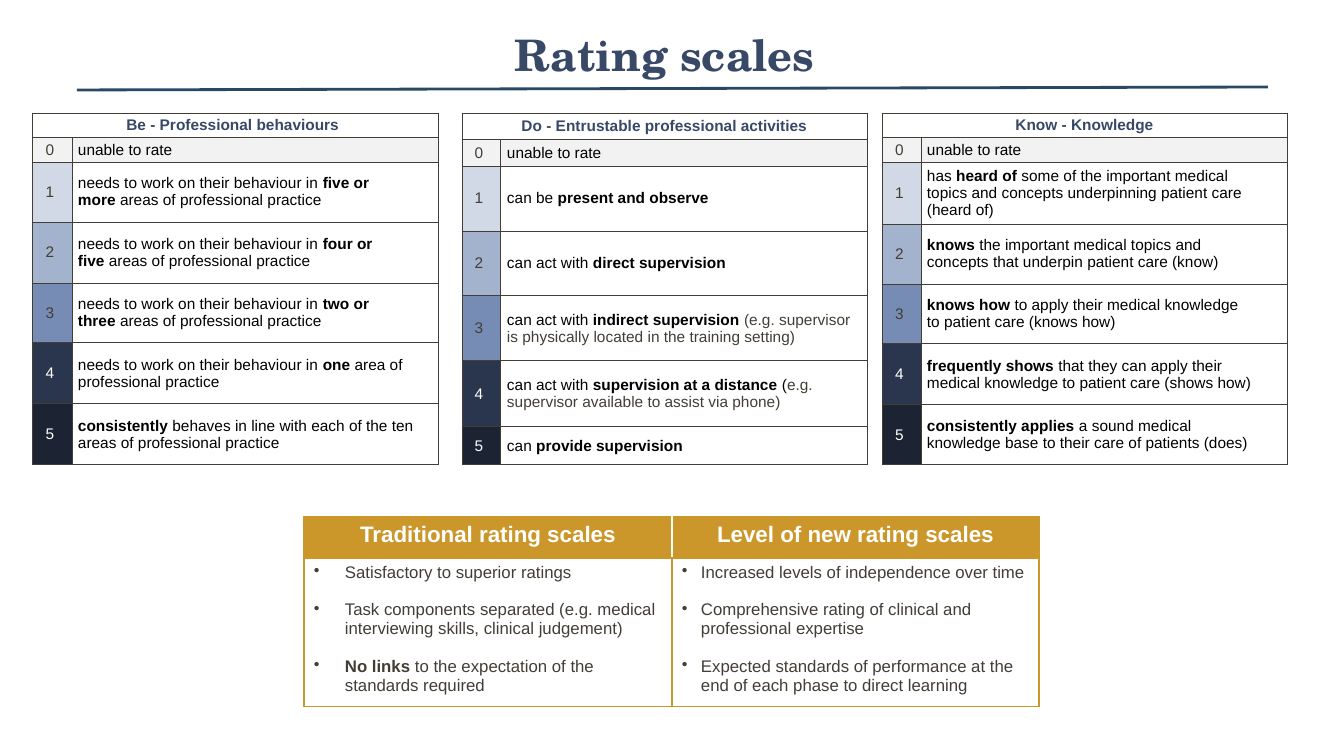
from lxml.etree import SubElement
from pptx import Presentation
from pptx.dml.color import RGBColor
from pptx.enum.shapes import MSO_CONNECTOR
from pptx.enum.text import MSO_ANCHOR, PP_ALIGN
from pptx.oxml.ns import qn
from pptx.util import Pt

SCALE = 12192000 / 1344
NBSP = chr(160)
NAVY, GREY, GOLD = "384967", "433E35", "CB972B"
BLACK, WHITE = "000000", "FFFFFF"
SHADES = ["F2F2F2", "D1D8E6", "A3B2CD", "768CB4", "2A364D", "1C2433"]
NEEDS = "needs to work on their~behaviour~in~"

SCALES = [
    dict(head="Be - Professional behaviours~", x=32, cols=(40, 366), pads=(6, 3),
         rows=(24, 24, 60, 61, 60, 61, 61), levels=[
             NEEDS + "*five~or more~*areas of professional practice",
             NEEDS + "*four~or five~*areas of professional practice",
             NEEDS + "*two~or three~*areas of professional practice",
             NEEDS + "*one~*area of professional practice",
             "*consistently~*behaves in line with each of~the ten areas of "
             "professional practice"]),
    dict(head="Do - Entrustable~professional activities", x=462, cols=(38, 367), pads=(7, 4),
         rows=(26, 26, 65, 65, 65, 66, 38), levels=[
             "can be~*present and observe*",
             "can act with~*direct supervision*",
             "can act with*~indirect supervision~*|(e.g. supervisor is physically "
             "located in the training setting)",
             "can act with~*supervision at a distance*~(|e.g. supervisor available "
             "to assist via phone)",
             "can~*provide supervision*"]),
    dict(head="Know - Knowledge", x=882, cols=(39, 366), pads=(6, 3),
         rows=(24, 24, 62, 60, 60, 61, 60), levels=[
             "has~*heard of~*some of the important medical topics~and concepts "
             "underpinning patient care (heard of)",
             "*knows~*the important medical topics and concepts~that underpin "
             "patient care (know)",
             "*knows how~*to apply their medical knowledge to~patient care (knows how)",
             "*frequently shows*~that they can apply their medical~knowledge to "
             "patient care (shows how)",
             "*consistently applies*~a sound medical knowledge~base to their care "
             "of patients (does)"]),
]

CHANGES = [
    ("Traditional rating scales", 31, [
        "Satisfactory to superior ratings",
        "Task components separated (e.g. medical interviewing skills, clinical judgement)",
        "*No links *to the expectation of the standards required"]),
    ("Level of new rating scales", 19, [
        "Increased levels of independence over time",
        "Comprehensive rating of clinical and professional expertise",
        "Expected standards of performance at the end of each phase to direct learning"]),
]


def px(n):
    return round(n * SCALE)


def tint(code):
    return RGBColor.from_string(code)


def write(para, text, size=11, color=BLACK, bold=False, font="Arial", align=None,
          dent=0, gap=0):
    """Fill a paragraph: *bold*, ~ for a no-break space, grey after |, bullet if dent."""
    if dent:
        props = para._p.get_or_add_pPr()
        props.set("marL", str(px(dent)))
        props.set("indent", str(-px(dent)))
        SubElement(props, qn("a:buChar"), char="•")
    if gap:
        para.space_before = Pt(gap)
    para.alignment = align
    main, _, aside = text.replace("~", NBSP).partition("|")
    parts = [(part, color, bold or i % 2 == 1) for i, part in enumerate(main.split("*"))]
    for part, shade, heavy in parts + [(aside, GREY, False)]:
        if part:
            run = para.add_run()
            run.text = part
            run.font.name, run.font.size, run.font.bold = font, Pt(size), heavy
            run.font.color.rgb = tint(shade)


class Board:
    """Holds the deck and the slide being drawn."""

    def __init__(self):
        self.deck = Presentation()
        self.deck.slide_width, self.deck.slide_height = px(1344), px(756)
        self.slide = self.deck.slides.add_slide(self.deck.slide_layouts[6])

    def title(self, text, x, y, w, h):
        frame = self.slide.shapes.add_textbox(*map(px, (x, y, w, h))).text_frame
        frame.word_wrap = True
        frame.vertical_anchor = MSO_ANCHOR.MIDDLE
        write(frame.paragraphs[0], text, size=31, color=NAVY, bold=True,
              font="TeX Gyre Schola", align=PP_ALIGN.CENTER)

    def line(self, x1, y1, x2, y2, color, width):
        line = self.slide.shapes.add_connector(MSO_CONNECTOR.STRAIGHT,
                                               *map(px, (x1, y1, x2, y2)))
        line.line.color.rgb = tint(color)
        line.line.width = Pt(width)
        SubElement(line._element.spPr, qn("a:effectLst"))

    def table(self, x, y, cols, rows):
        table = self.slide.shapes.add_table(
            len(rows), len(cols), *map(px, (x, y, sum(cols), sum(rows)))).table
        table.first_row = table.horz_banding = False
        for col, width in zip(table.columns, cols):
            col.width = px(width)
        for row, height in zip(table.rows, rows):
            row.height = px(height)
        return table

    def cell(self, cell, fill, edge, width, pads=(10, 5), sides=None,
             anchor=MSO_ANCHOR.MIDDLE):
        """Style a cell; sides overrides the edge colour for L, R, T or B."""
        cell.margin_left = cell.margin_right = px(pads[0])
        cell.margin_top = cell.margin_bottom = px(pads[1])
        cell.vertical_anchor = anchor
        props = cell._tc.get_or_add_tcPr()
        for side in "LRTB":
            ln = SubElement(props, qn("a:ln" + side), w=str(Pt(width)))
            solid = SubElement(ln, qn("a:solidFill"))
            SubElement(solid, qn("a:srgbClr"), val=(sides or {}).get(side, edge))
        cell.fill.solid()
        cell.fill.fore_color.rgb = tint(fill)
        return cell.text_frame.paragraphs[0]

    def scale(self, head, x, cols, pads, rows, levels):
        table = self.table(x, 113, cols, rows)
        look = dict(edge=GREY, width=0.61, pads=pads)
        table.cell(0, 0).merge(table.cell(0, 1))
        paras = [self.cell(table.cell(0, col), WHITE, **look) for col in (0, 1)]
        write(paras[0], head, color=NAVY, bold=True, align=PP_ALIGN.CENTER)
        for level, text in enumerate(["unable to rate"] + levels):
            shade = SHADES[level]
            mark = self.cell(table.cell(level + 1, 0), shade, **look)
            write(mark, f"{level}~", color=WHITE if level > 3 else GREY,
                  align=PP_ALIGN.CENTER)
            label = self.cell(table.cell(level + 1, 1), WHITE if level else shade, **look)
            write(label, text)

    def change(self, columns, x, y, cols, rows):
        table = self.table(x, y, cols, rows)
        look = dict(edge=GOLD, width=1, anchor=MSO_ANCHOR.TOP)
        for col, (head, dent, points) in enumerate(columns):
            top = self.cell(table.cell(0, col), GOLD, sides={"RL"[col]: WHITE}, **look)
            write(top, head, size=16, color=WHITE, bold=True, align=PP_ALIGN.CENTER)
            body = table.cell(1, col)
            para = self.cell(body, WHITE, **look)
            for i, point in enumerate(points):
                if i:
                    para = body.text_frame.add_paragraph()
                write(para, point, size=12, color=GREY, dent=dent, gap=13.5 if i else 0)


def main():
    board = Board()
    board.title("Rating scales", 211, 7, 907, 95)
    board.line(77, 90, 1268, 87, "294864", 2)
    for scale in SCALES:
        board.scale(**scale)
    board.change(CHANGES, 304, 517, (368, 367), (41, 142))
    board.deck.save("out.pptx")


if __name__ == "__main__":
    main()
